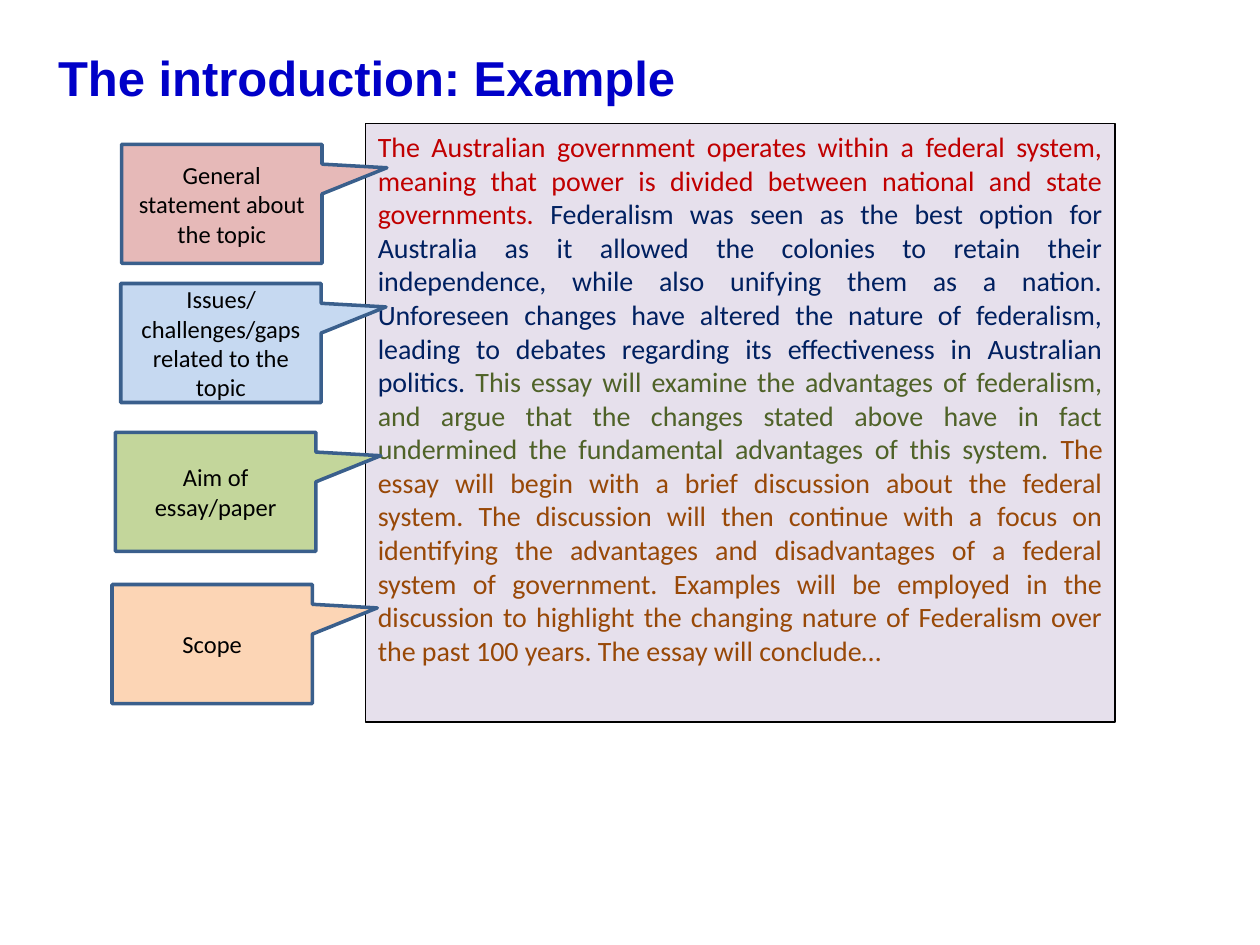
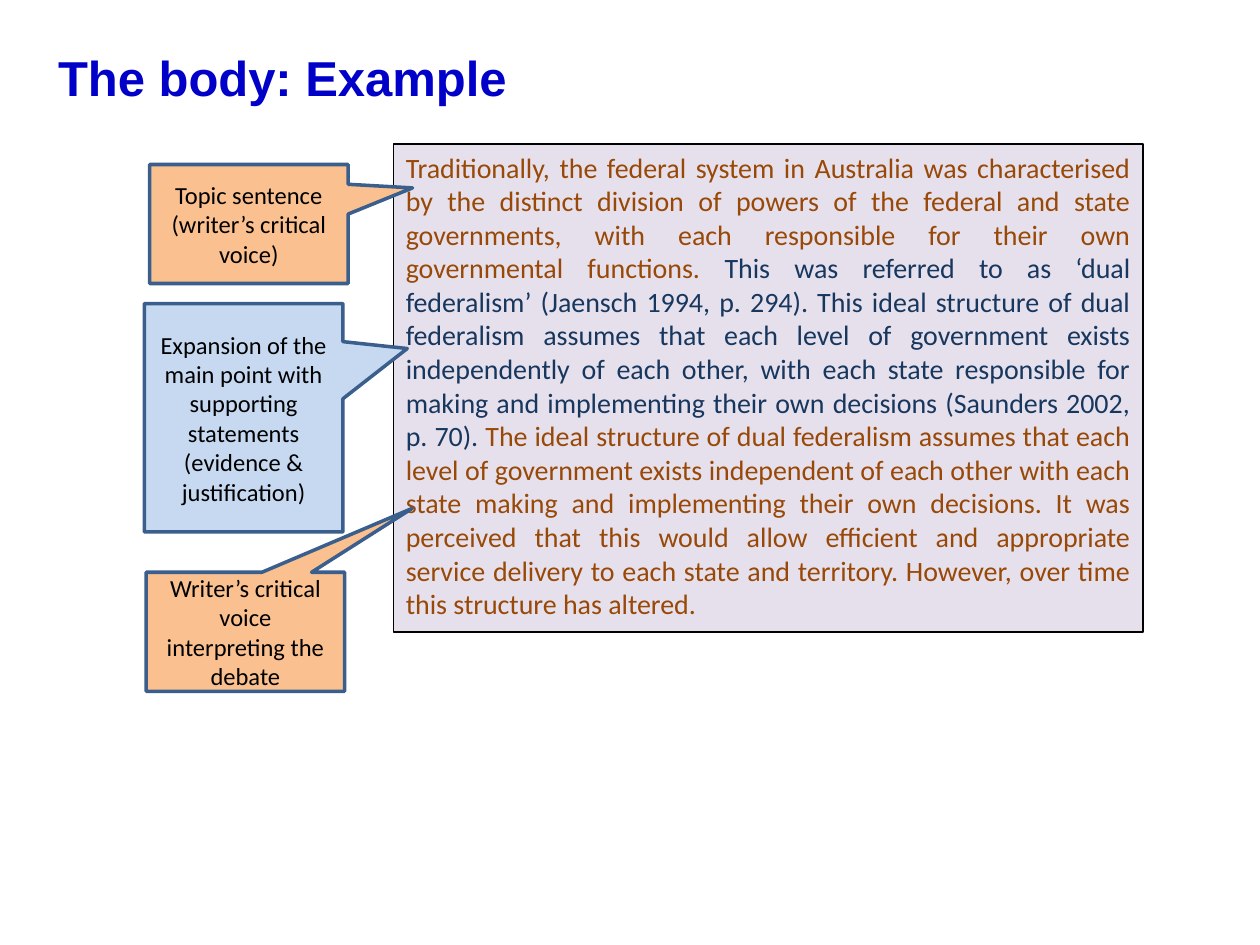
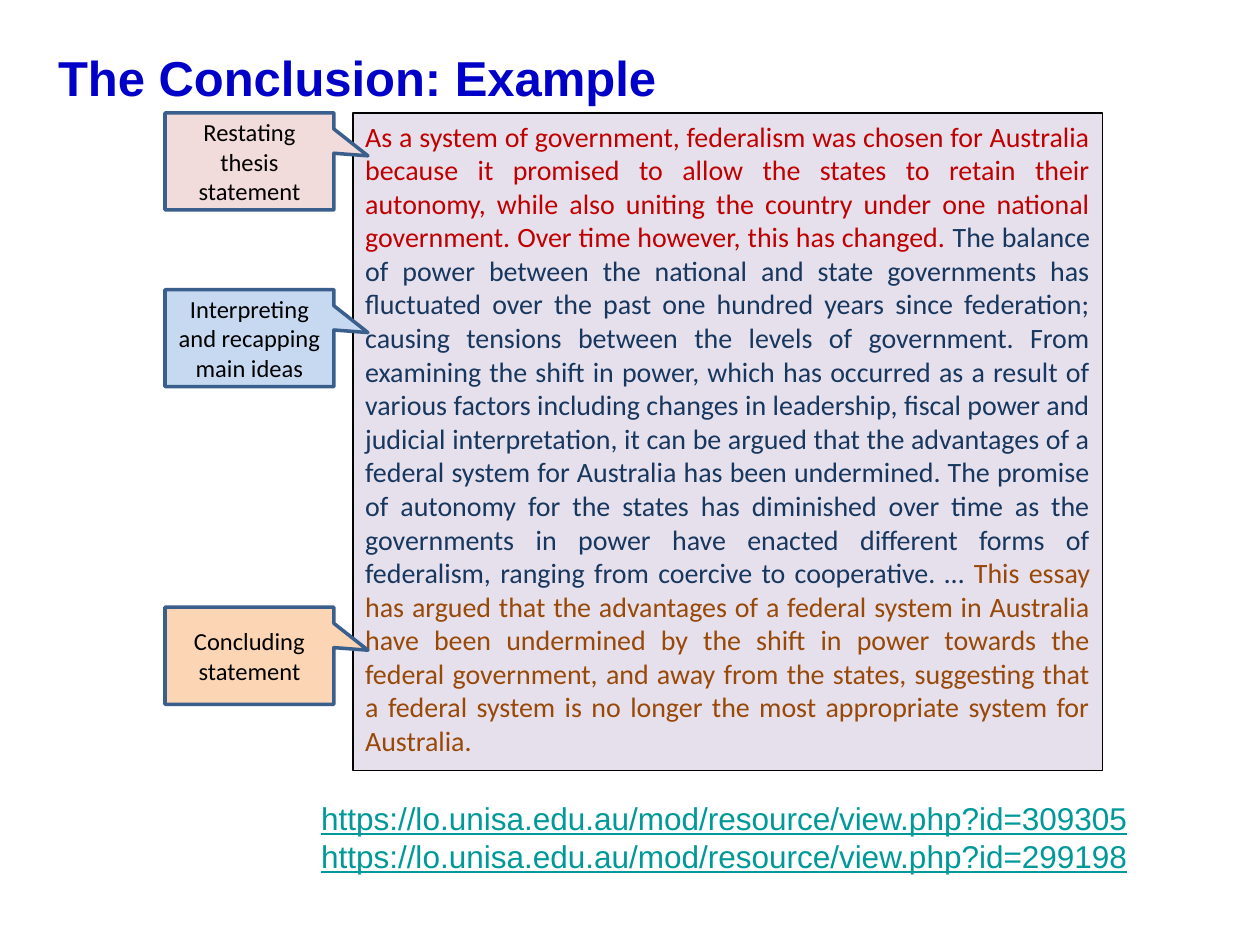
from dataclasses import dataclass

import pptx
import pptx.dml.color
import pptx.enum.shapes
import pptx.enum.text
import pptx.util

Pt = pptx.util.Pt
Align = pptx.enum.text.PP_ALIGN
Anchor = pptx.enum.text.MSO_ANCHOR
Preset = pptx.enum.shapes.MSO_SHAPE


@dataclass(frozen=True)
class Theme:
    heading_font: str = "Arial"
    text_font: str = "Calibri"
    title_size: int = 28
    link_size: int = 18
    essay_size: int = 16
    callout_size: int = 14
    title: str = "0000C8"
    link: str = "009999"
    black: str = "000000"
    essay_fill: str = "E6E0EC"
    callout_line: str = "3A5F8C"
    red: str = "C00000"
    navy: str = "002060"
    blue: str = "17375E"
    green: str = "4F6228"
    brown: str = "984807"
    rose_fill: str = "E6B9B8"
    pale_rose_fill: str = "F2DCDB"
    blue_fill: str = "C6D9F1"
    green_fill: str = "C3D69B"
    peach_fill: str = "FCD5B5"
    orange_fill: str = "FAC090"


THEME = Theme()
ESSAY_WIDTH = 428.4
SIDE_POINTER = (0.824, -0.303)
UPWARD_POINTER = (0.84, -1.037)
SHORT_POINTER = (0.702, -0.057)


def rgb(color):
    return pptx.dml.color.RGBColor.from_string(color)


def style_font(font, name, size, color):
    font.name = name
    font.size = Pt(size)
    font.color.rgb = rgb(color)


def add_example_slide(presentation, title):
    slide = presentation.slides.add_slide(presentation.slide_layouts[5])
    shape = slide.shapes.title
    shape.left, shape.top, shape.width, shape.height = Pt(26), Pt(23.5), Pt(677.5), Pt(50)
    frame = shape.text_frame
    frame.text = title
    frame.auto_size = pptx.enum.text.MSO_AUTO_SIZE.NONE
    frame.vertical_anchor = Anchor.TOP
    paragraph = frame.paragraphs[0]
    paragraph.alignment = Align.LEFT
    style_font(paragraph.font, THEME.heading_font, THEME.title_size, THEME.title)
    paragraph.font.bold = True
    return slide


def add_filled_shape(slide, preset, box, fill, line, line_width):
    shape = slide.shapes.add_shape(preset, *map(Pt, box))
    shape.shadow.inherit = False
    shape.fill.solid()
    shape.fill.fore_color.rgb = rgb(fill)
    shape.line.color.rgb = rgb(line)
    shape.line.width = Pt(line_width)
    shape.text_frame.word_wrap = True
    return shape


def add_essay(slide, left, top, height, passages):
    """Add the sample text; passages are (text, color) pairs in one paragraph."""
    shape = add_filled_shape(slide, Preset.RECTANGLE, (left, top, ESSAY_WIDTH, height),
                             THEME.essay_fill, THEME.black, 1)
    shape.text_frame.vertical_anchor = Anchor.TOP
    paragraph = shape.text_frame.paragraphs[0]
    paragraph.alignment = Align.JUSTIFY
    for text, color in passages:
        run = paragraph.add_run()
        run.text = text
        style_font(run.font, THEME.text_font, THEME.essay_size, color)


def add_callout(slide, box, text, fill, pointer):
    """Add a label whose pointer tip is an offset from its centre, in box sizes."""
    shape = add_filled_shape(slide, Preset.RECTANGULAR_CALLOUT, box, fill,
                             THEME.callout_line, 2)
    shape.adjustments[0], shape.adjustments[1] = pointer
    shape.text_frame.text = text
    shape.text_frame.vertical_anchor = Anchor.MIDDLE
    paragraph = shape.text_frame.paragraphs[0]
    paragraph.alignment = Align.CENTER
    style_font(paragraph.font, THEME.text_font, THEME.callout_size, THEME.black)


def add_web_addresses(slide, box, addresses):
    frame = slide.shapes.add_textbox(*map(Pt, box)).text_frame
    frame.word_wrap = True
    frame.text = "\n".join(addresses)
    for paragraph in frame.paragraphs:
        style_font(paragraph.font, THEME.heading_font, THEME.link_size, THEME.link)
        paragraph.font.underline = True


def add_introduction(presentation):
    slide = add_example_slide(presentation, "The introduction: Example")
    add_essay(slide, 208.8, 70.5, 342, [
        ("The Australian government operates within a federal system, meaning that power "
         "is divided between national and state governments. ", THEME.red),
        ("Federalism was seen as the best option for Australia as it allowed the colonies "
         "to retain their independence, while also unifying them as a nation. Unforeseen "
         "changes have altered the nature of federalism, leading to debates regarding its "
         "effectiveness in Australian politics. ", THEME.navy),
        ("This essay will examine the advantages of federalism, and argue that the changes "
         "stated above have in fact undermined the fundamental advantages of this system. ",
         THEME.green),
        ("The essay will begin with a brief discussion about the federal system. The "
         "discussion will then continue with a focus on identifying the advantages and "
         "disadvantages of a federal system of government. Examples will be employed in the "
         "discussion to highlight the changing nature of Federalism over the past 100 years. "
         "The essay will conclude…", THEME.brown),
    ])
    for left, top, text, fill in [
        (69.5, 82.5, "General statement about the topic", THEME.rose_fill),
        (69, 162, "Issues/challenges/gaps related to the topic", THEME.blue_fill),
        (66, 247, "Aim of essay/paper", THEME.green_fill),
        (64, 334, "Scope", THEME.peach_fill),
    ]:
        add_callout(slide, (left, top, 114.5, 68), text, fill, SIDE_POINTER)


def add_body(presentation):
    slide = add_example_slide(presentation, "The body: Example")
    add_essay(slide, 224.8, 82.2, 278.8, [
        ("Traditionally, the federal system in Australia was characterised by the distinct "
         "division of powers of the federal and state governments, with each responsible "
         "for their own governmental functions. ", THEME.brown),
        ("This was referred to as ‘dual federalism’ (Jaensch 1994, p. 294). This ideal "
         "structure of dual federalism assumes that each level of government exists "
         "independently of each other, with each state responsible for making and "
         "implementing their own decisions (Saunders 2002, p. 70). ", THEME.blue),
        ("The ideal structure of dual federalism assumes that each level of government "
         "exists independent of each other with each state making and implementing their "
         "own decisions. It was perceived that this would allow efficient and appropriate "
         "service delivery to each state and territory. However, over time this structure "
         "has altered.", THEME.brown),
    ])
    for left, top, height, text, fill, pointer in [
        (85.5, 94, 68, "Topic sentence (writer’s critical voice)",
         THEME.orange_fill, SIDE_POINTER),
        (82.5, 173.5, 130.5, "Expansion of the main point with supporting statements "
         "(evidence & justification)", THEME.blue_fill, SIDE_POINTER),
        (83.5, 327, 68, "Writer’s critical voice interpreting the debate",
         THEME.orange_fill, UPWARD_POINTER),
    ]:
        add_callout(slide, (left, top, 113.5, height), text, fill, pointer)


def add_conclusion(presentation):
    slide = add_example_slide(presentation, "The Conclusion: Example")
    add_essay(slide, 201.6, 64.5, 375.8, [
        ("As a system of government, federalism was chosen for Australia because it "
         "promised to allow the states to retain their autonomy, while also uniting the "
         "country under one national government. Over time however, this has changed. ",
         THEME.red),
        ("The balance of power between the national and state governments has fluctuated "
         "over the past one hundred years since federation; causing tensions between the "
         "levels of government. From examining the shift in power, which has occurred as a "
         "result of various factors including changes in leadership, fiscal power and "
         "judicial interpretation, it can be argued that the advantages of a federal system "
         "for Australia has been undermined. The promise of autonomy for the states has "
         "diminished over time as the governments in power have enacted different forms of "
         "federalism, ranging from coercive to cooperative. … ", THEME.blue),
        ("This essay has argued that the advantages of a federal system in Australia have "
         "been undermined by the shift in power towards the federal government, and away "
         "from the states, suggesting that a federal system is no longer the most "
         "appropriate system for Australia.", THEME.brown),
    ])
    for top, text, fill in [
        (64.5, "Restating thesis statement", THEME.pale_rose_fill),
        (165.5, "Interpreting and recapping main ideas", THEME.blue_fill),
        (347, "Concluding statement", THEME.peach_fill),
    ]:
        add_callout(slide, (94.3, top, 96.5, 55.5), text, fill, SHORT_POINTER)
    add_web_addresses(slide, (176.4, 453, 529, 51), [
        "https://lo.unisa.edu.au/mod/resource/view.php?id=309305",
        "https://lo.unisa.edu.au/mod/resource/view.php?id=299198",
    ])


def main():
    presentation = pptx.Presentation()
    presentation.slide_width = Pt(720)
    presentation.slide_height = Pt(540)
    add_introduction(presentation)
    add_body(presentation)
    add_conclusion(presentation)
    presentation.save("out.pptx")


if __name__ == "__main__":
    main()
